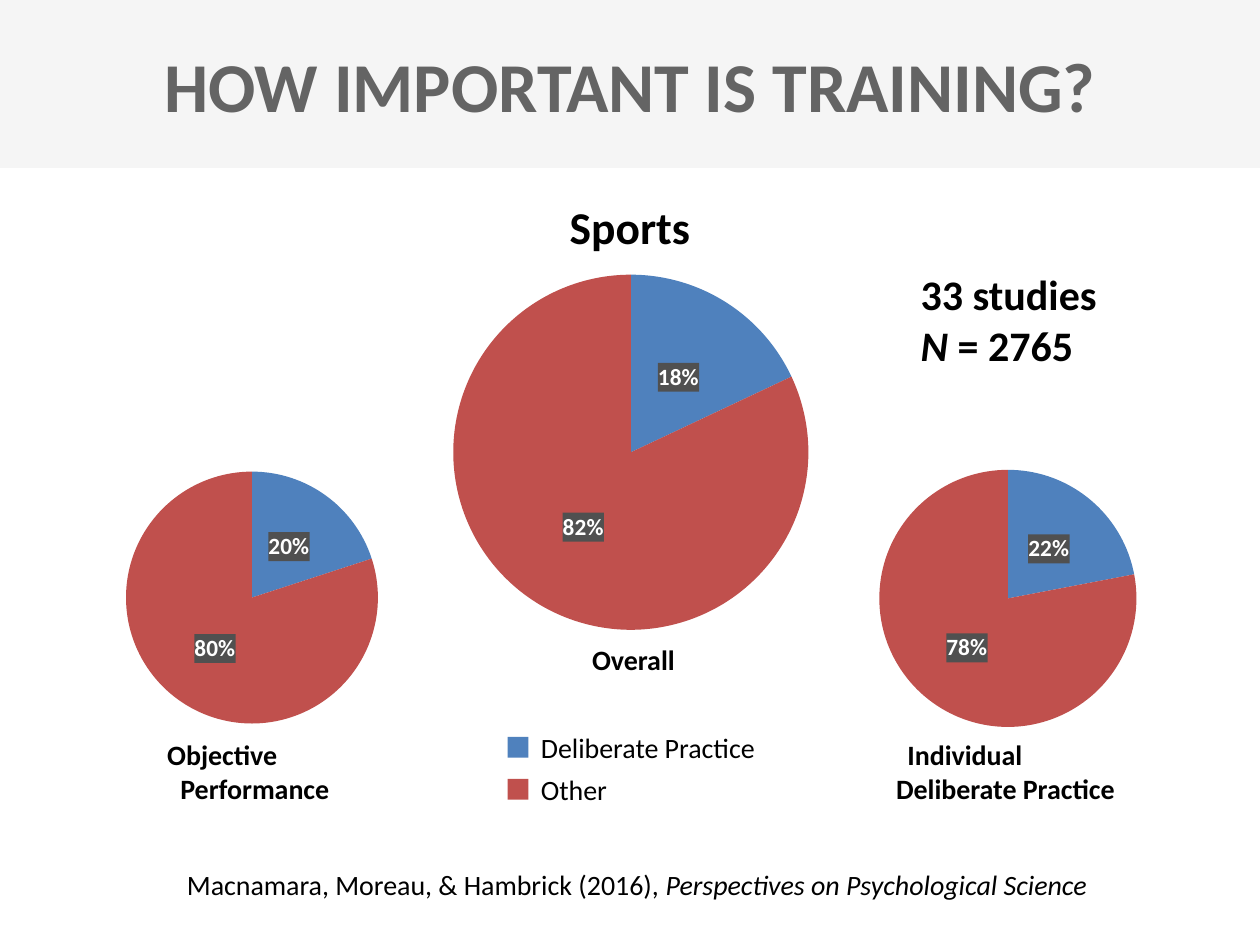
from lxml.etree import fromstring
from pptx import Presentation
from pptx.chart.data import CategoryChartData
from pptx.dml.color import RGBColor
from pptx.enum.chart import XL_CHART_TYPE, XL_LABEL_POSITION
from pptx.enum.shapes import MSO_SHAPE
from pptx.enum.text import MSO_ANCHOR, PP_ALIGN
from pptx.oxml.ns import qn
from pptx.util import Pt

COLORS = {
    "band": "F5F5F5",
    "title": "646464",
    "text": "000000",
    "label": "FFFFFF",
    "tag": "505050",
    "practice": "4F81BD",
    "other": "C0504D",
}
FONT = "Calibri"
KEYS = (("Deliberate Practice", "practice"), ("Other", "other"))
SPACES = (
    'xmlns:c="http://schemas.openxmlformats.org/drawingml/2006/chart" '
    'xmlns:a="http://schemas.openxmlformats.org/drawingml/2006/main"'
)


def shade(name):
    return RGBColor.from_string(COLORS[name])


def style(font, size, color="text", bold=False):
    font.name = FONT
    font.size = Pt(size)
    font.bold = bold
    font.color.rgb = shade(color)


def add_rect(slide, box, color):
    rect = slide.shapes.add_shape(MSO_SHAPE.RECTANGLE, *map(Pt, box))
    rect.shadow.inherit = False
    rect.fill.solid()
    rect.fill.fore_color.rgb = shade(color)
    rect.line.fill.background()


def add_text(slide, box, lines, size, color="text", bold=False,
             align=PP_ALIGN.CENTER, slant=()):
    frame = slide.shapes.add_textbox(*map(Pt, box)).text_frame
    frame.word_wrap = True
    for index, parts in enumerate(lines):
        para = frame.paragraphs[0] if index == 0 else frame.add_paragraph()
        para.alignment = align
        for part in parts:
            run = para.add_run()
            run.text = part
            style(run.font, size, color, bold)
            run.font.italic = part in slant
    return frame


def add_header(slide, box):
    left, top, width, height = box
    add_rect(slide, box, "band")
    frame = add_text(slide, (left, top + 32, width, 32),
                     [["HOW IMPORTANT IS TRAINING?"]], 40, "title", True)
    frame.vertical_anchor = MSO_ANCHOR.MIDDLE


def add_pie(slide, box, size, share):
    left, top, width, height = box
    data = CategoryChartData()
    data.categories = ["1", "2"]
    data.add_series("Series 1", (share, 100 - share))
    chart = slide.shapes.add_chart(
        XL_CHART_TYPE.PIE, *map(Pt, box), data).chart
    chart.has_legend = False
    chart.has_title = False
    style(chart.font, 10)
    plot = chart.plots[0]
    plot.vary_by_categories = True
    for index, (name, color) in enumerate(KEYS):
        fill = plot.series[0].points[index].format.fill
        fill.solid()
        fill.fore_color.rgb = shade(color)

    labels = plot.series[0].data_labels
    labels.show_percentage = True
    labels.show_value = False
    labels.number_format = "0%"
    labels.number_format_is_linked = False
    labels.position = XL_LABEL_POSITION.CENTER
    style(labels.font, 13.3, "label", True)
    tag = fromstring(
        f'<c:spPr {SPACES}><a:solidFill><a:srgbClr val="{COLORS["tag"]}"/>'
        '</a:solidFill></c:spPr>')
    labels.font._element.getparent().getparent().getparent().addprevious(tag)

    wide, high = size / width, size / height
    spots = {"x": (1 - wide) / 2, "y": (1 - high) / 2, "w": wide, "h": high}
    modes = "".join(f'<c:{key}Mode val="edge"/>' for key in "xy")
    sides = "".join(f'<c:{key} val="{spots[key]:.4f}"/>' for key in "xywh")
    layout = fromstring(
        f'<c:layout {SPACES}><c:manualLayout><c:layoutTarget val="inner"/>'
        f'{modes}{sides}</c:manualLayout></c:layout>')
    area = plot._element.getparent()
    for old in area.findall(qn("c:layout")):
        area.remove(old)
    area.insert(0, layout)


def add_caption(slide, box, lines, indents):
    frame = add_text(slide, box, [[line] for line in lines], 16,
                     bold=True, align=PP_ALIGN.LEFT)
    for para, indent in zip(frame.paragraphs, indents):
        para._p.get_or_add_pPr().set("marL", str(Pt(indent)))


def add_legend(slide, box):
    left, top, width, height = box
    step = height / len(KEYS)
    for index, (name, color) in enumerate(KEYS):
        row = top + index * step
        add_rect(slide, (left, row + 7, 12, 12), color)
        add_text(slide, (left + 12, row, width - 12, 26), [[name]], 16,
                 align=PP_ALIGN.LEFT)


def add_facts(slide, box):
    add_text(slide, box, [["33 studies"], ["N", " = 2765"]], 24,
             bold=True, align=PP_ALIGN.LEFT, slant=("N",))


def add_source(slide, box):
    work = "Perspectives on Psychological Science"
    add_text(slide, box, [["Macnamara, Moreau, & Hambrick (2016), ", work]],
             16, slant=(work,))


def main():
    deck = Presentation()
    deck.slide_width, deck.slide_height = Pt(720), Pt(540)
    slide = deck.slides.add_slide(deck.slide_layouts[6])
    add_header(slide, (0, 0, 720, 96))
    add_pie(slide, (426, 258.5, 300, 167), 147, 22)
    add_pie(slide, (0, 261, 288, 161), 144, 20)
    add_caption(slide, (62.5, 418, 166, 46),
                ("Objective", "Performance"), (26, 33.5))
    add_caption(slide, (492.5, 418, 166, 46),
                ("Individual", "Deliberate Practice"), (19, 12.5))
    add_source(slide, (8, 492, 712, 26))
    add_text(slide, (279, 363.5, 166, 26), [["Overall"]], 16, bold=True)
    add_pie(slide, (195, 147, 331, 223), 203, 18)
    add_text(slide, (207, 110, 306, 39), [["Sports"]], 26, bold=True)
    add_legend(slide, (290, 414, 178, 48))
    add_facts(slide, (519, 150, 176, 65))
    deck.save("out.pptx")


if __name__ == "__main__":
    main()
